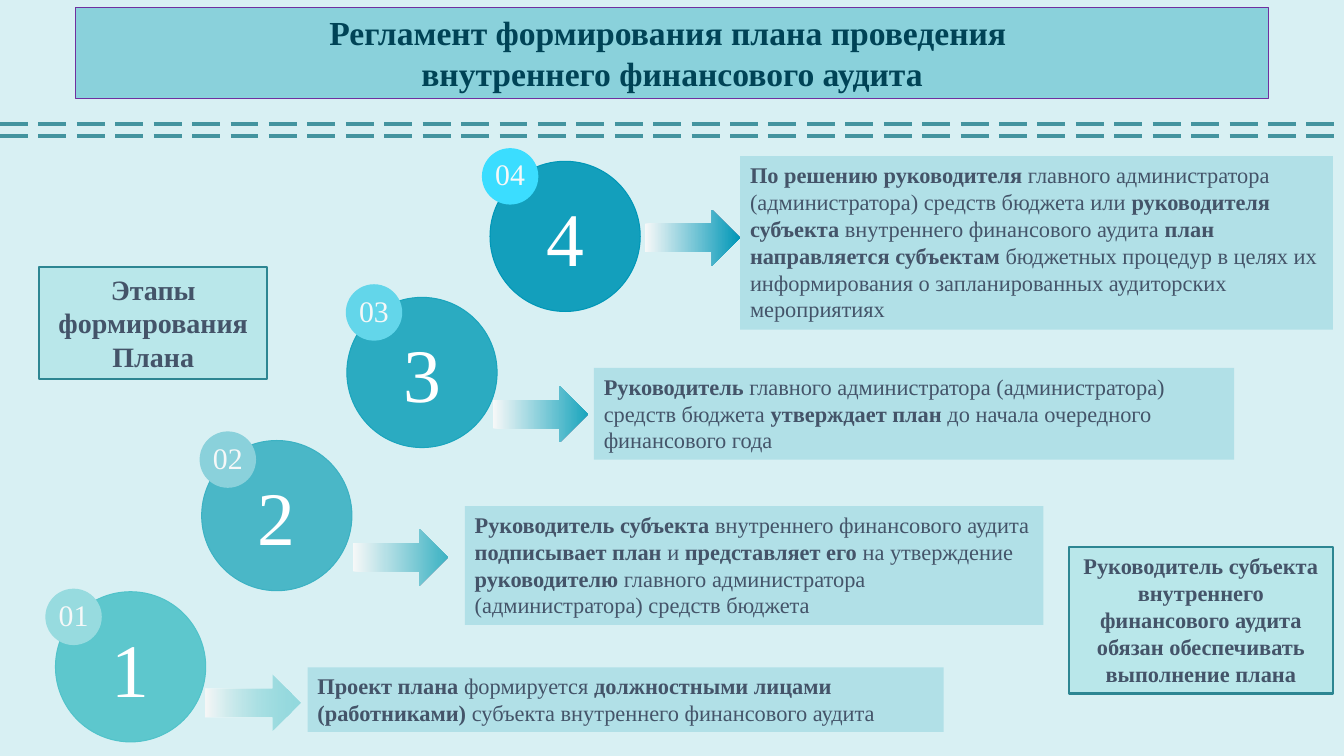
from dataclasses import dataclass

from lxml.etree import SubElement
from pptx import Presentation
from pptx.dml.color import RGBColor
from pptx.enum.dml import MSO_LINE
from pptx.enum.shapes import MSO_CONNECTOR, MSO_SHAPE as Preset
from pptx.enum.text import MSO_ANCHOR as Anchor, MSO_AUTO_SIZE as AutoSize, PP_ALIGN as Align
from pptx.oxml.ns import qn
from pptx.util import Inches, Pt


@dataclass(frozen=True)
class Theme:
    font: str = "Times New Roman"
    background: str = "D8F0F3"
    title_fill: str = "8AD1DB"
    title_line: str = "7030A0"
    title_ink: str = "004356"
    road: str = "43949F"
    note_fill: str = "B9E7EA"
    note_line: str = "2D8692"
    step_fill: str = "B1E0E7"
    ink: str = "445469"
    white: str = "FFFFFF"
    pale: str = "F6F8F8"
    number_size: float = 54
    title_size: float = 24
    badge_size: float = 21.3
    heading_size: float = 20
    body_size: float = 16


THEME = Theme()
rgb = RGBColor.from_string


def paint(shape, fill, line=None, width=0.75):
    shape.shadow.inherit = False
    shape.fill.solid()
    shape.fill.fore_color.rgb = rgb(fill)
    if line:
        shape.line.color.rgb = rgb(line)
        shape.line.width = Pt(width)
    else:
        shape.line.fill.background()


def write(shape, text, size, color, align=Align.CENTER, spacing=None, **frame_format):
    """Fill the shape with text: newlines part paragraphs, asterisks enclose bold."""
    frame = shape.text_frame
    frame_values = {"word_wrap": True, "auto_size": AutoSize.NONE,
                    "vertical_anchor": Anchor.TOP, **frame_format}
    for name, value in frame_values.items():
        setattr(frame, name, value)
    for index, line in enumerate(text.split("\n")):
        para = frame.add_paragraph() if index else frame.paragraphs[0]
        para.alignment = align
        if spacing:
            para.line_spacing = spacing
        for part, words in enumerate(line.split("*")):
            if not words:
                continue
            span = para.add_run()
            span.text = words
            font_values = {"name": THEME.font, "size": Pt(size), "bold": part % 2 == 1}
            for name, value in font_values.items():
                setattr(span.font, name, value)
            span.font.color.rgb = rgb(color)


deck = Presentation()
deck.slide_width, deck.slide_height = Inches(13.33), Inches(7.5)
page = deck.slides.add_slide(deck.slide_layouts[5])
page.background.fill.solid()
page.background.fill.fore_color.rgb = rgb(THEME.background)

# Title band and dashed road
title = page.shapes.title
title_place = {"left": 0.75, "top": 0.07, "width": 11.83, "height": 0.91}
for name, value in title_place.items():
    setattr(title, name, Inches(value))
paint(title, THEME.title_fill, THEME.title_line)
write(title, "*Регламент формирования плана проведения *\n*внутреннего финансового аудита*",
      THEME.title_size, THEME.title_ink)

for y in (1.23, 1.35):
    road = page.shapes.add_connector(
        MSO_CONNECTOR.STRAIGHT, 0, Inches(y), deck.slide_width, Inches(y))
    road.line.color.rgb = rgb(THEME.road)
    road.line.width = Pt(2.5)
    road.line.dash_style = MSO_LINE.LONG_DASH
    SubElement(road.element.spPr, qn("a:effectLst"))

# Steps: circle colour, badge colour, circle, badge and arrow corners, text box, text
steps = [
    ("51C3CA", "97DBDF", (0.55, 5.87), (0.45, 5.84), (2.04, 6.69), (3.05, 6.62, 6.31, 0.64),
     "*Проект плана *формируется *должностными лицами (работниками)*"
     " субъекта внутреннего финансового аудита"),
    ("3CB2C3", "8AD1DB", (2, 4.37), (1.98, 4.28), (3.5, 5.25), (4.61, 5.02, 5.74, 1.18),
     "*Руководитель субъекта *внутреннего финансового аудита *подписывает план *и "
     "*представляет его *на утверждение *руководителю *главного администратора "
     "(администратора) средств бюджета"),
    ("1AA5BD", "63D6EA", (3.44, 2.95), (3.43, 2.82), (4.89, 3.83), (5.89, 3.65, 6.35, 0.91),
     "*Руководитель *главного администратора (администратора) средств бюджета "
     "*утверждает план *до начала очередного финансового года"),
    ("0097B7", "3BDDFF", (4.86, 1.6), (4.78, 1.47), (6.4, 2.08), (7.34, 1.55, 5.88, 1.72),
     "*По решению руководителя* главного администратора (администратора) средств бюджета или "
     "*руководителя субъекта *внутреннего финансового аудита *план направляется субъектам *"
     "бюджетных процедур в целях их информирования о запланированных аудиторских мероприятиях"),
]
for number, (color, badge_color, circle_at, badge_at, arrow_at, box_at, text) in enumerate(steps, 1):
    arrow = page.shapes.add_shape(
        Preset.RIGHT_ARROW, *map(Inches, (*arrow_at, 0.94, 0.56)))
    paint(arrow, color)
    arrow.fill.gradient()
    arrow.fill.gradient_angle = 0
    for stop, stop_color in zip(arrow.fill.gradient_stops, (THEME.pale, color)):
        stop.color.rgb = rgb(stop_color)

    circle = page.shapes.add_shape(Preset.OVAL, *map(Inches, (*circle_at, 1.49, 1.49)))
    paint(circle, color, color)
    write(circle, str(number), THEME.number_size, THEME.white, vertical_anchor=Anchor.MIDDLE)

    opacities = [(circle.element.spPr.find(qn("a:solidFill"))[0], 91)]
    if number == 1:
        opacities.append((list(arrow.element.spPr.iter(qn("a:srgbClr")))[1], 51))
    for color_node, percent in opacities:
        SubElement(color_node, qn("a:alpha"), val=str(percent * 1000))

    badge = page.shapes.add_shape(Preset.OVAL, *map(Inches, (*badge_at, 0.56, 0.56)))
    paint(badge, badge_color)
    write(badge, f"{number:02}", THEME.badge_size, THEME.pale, spacing=0.89,
          word_wrap=False, vertical_anchor=Anchor.MIDDLE,
          margin_left=0, margin_right=0, margin_top=0, margin_bottom=0)

    box = page.shapes.add_shape(Preset.RECTANGLE, *map(Inches, box_at))
    paint(box, THEME.step_fill)
    write(box, text, THEME.body_size, THEME.ink, Align.LEFT)

# Framed notes
notes = [
    ((0.39, 2.65, 2.26, 1.11), THEME.heading_size, "*Этапы формирования Плана*"),
    ((10.6, 5.43, 2.62, 1.45), THEME.body_size,
     "*Руководитель субъекта внутреннего финансового аудита обязан обеспечивать выполнение плана*"),
]
for note_at, size, text in notes:
    note = page.shapes.add_shape(Preset.RECTANGLE, *map(Inches, note_at))
    paint(note, THEME.note_fill, THEME.note_line, 1.5)
    write(note, text, size, THEME.ink)

deck.save("out.pptx")
